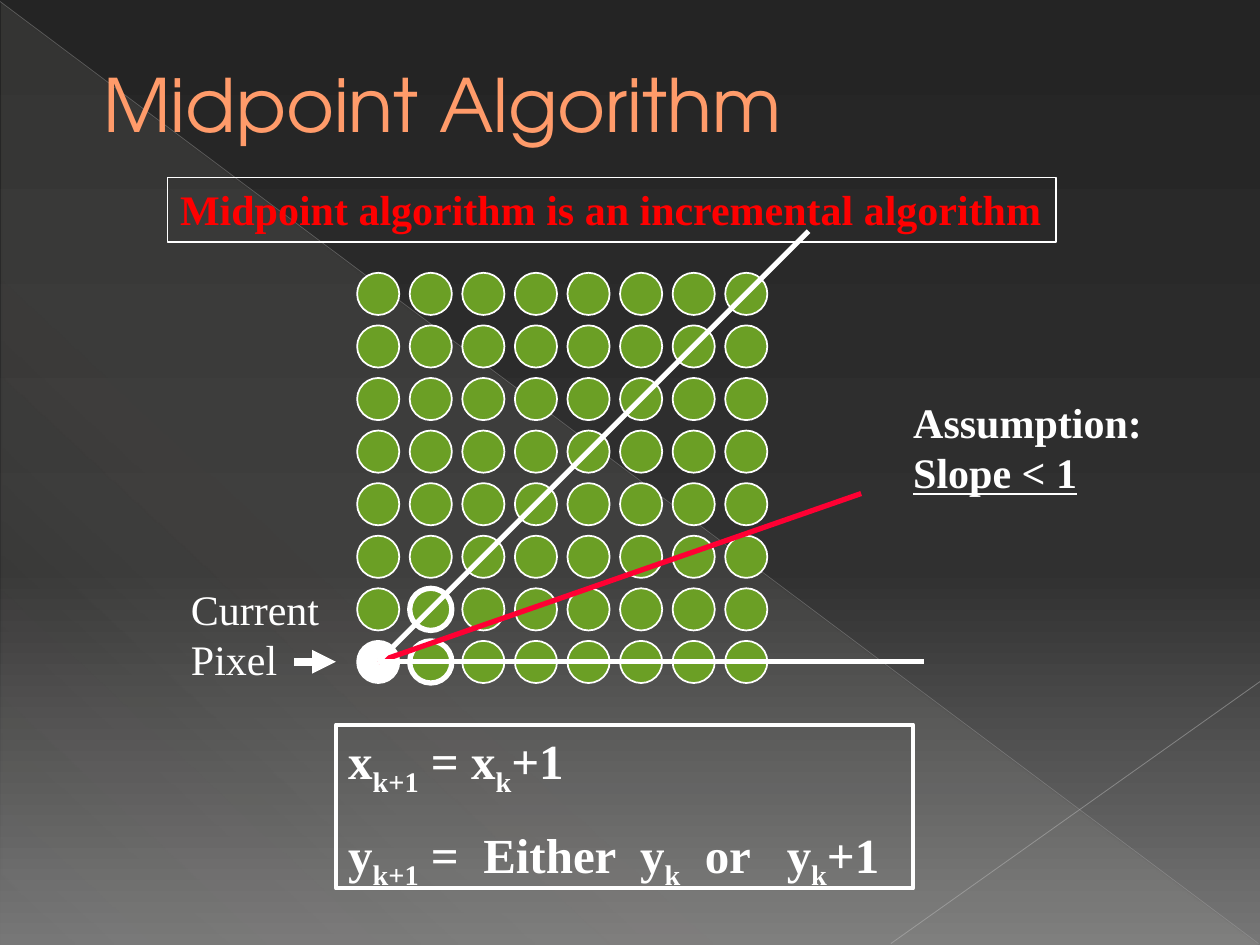
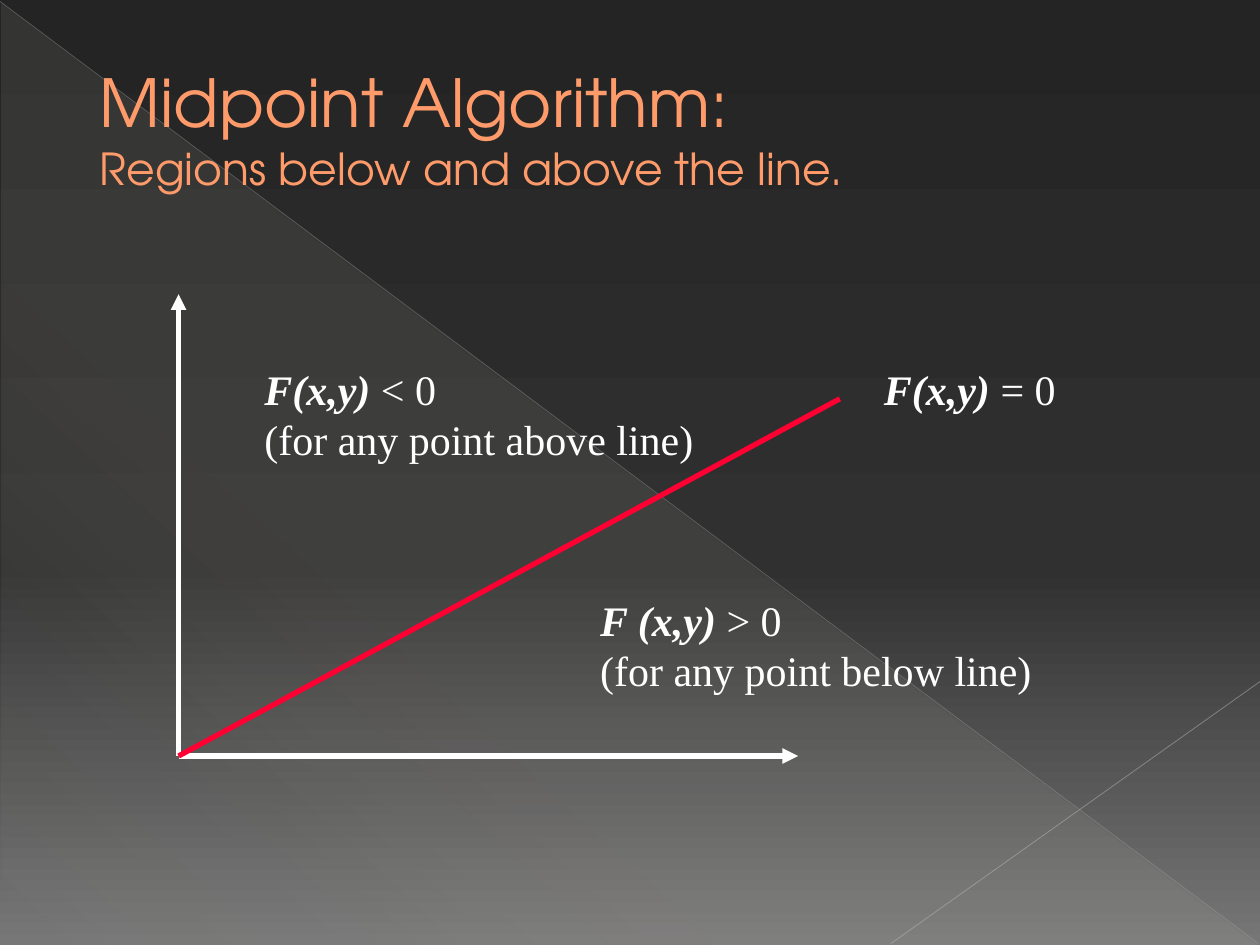
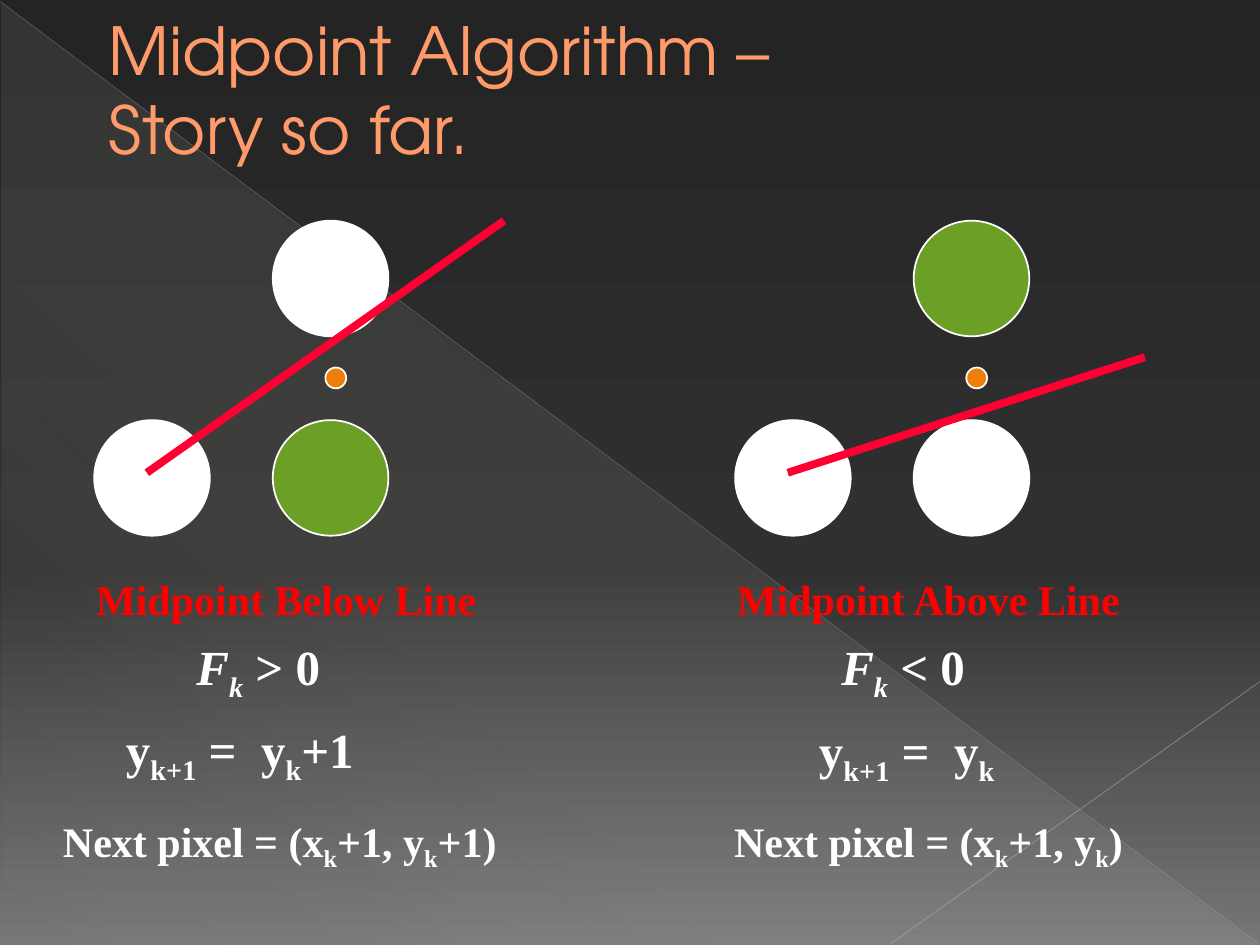
from dataclasses import dataclass

from lxml import etree
from pptx import Presentation
from pptx.dml.color import RGBColor
from pptx.enum.shapes import MSO_CONNECTOR, MSO_SHAPE
from pptx.enum.text import MSO_ANCHOR, MSO_AUTO_SIZE, PP_ALIGN
from pptx.oxml.ns import qn
from pptx.util import Cm, Pt

STRAIGHT = MSO_CONNECTOR.STRAIGHT
OVAL, RECTANGLE, TRIANGLE = MSO_SHAPE.OVAL, MSO_SHAPE.RECTANGLE, MSO_SHAPE.RIGHT_TRIANGLE
LEFT, TOP, MIDDLE = PP_ALIGN.LEFT, MSO_ANCHOR.TOP, MSO_ANCHOR.MIDDLE
FIT_TEXT, NO_FIT = MSO_AUTO_SIZE.SHAPE_TO_FIT_TEXT, MSO_AUTO_SIZE.NONE


@dataclass(frozen=True)
class Theme:
    title_font: str = "TeX Gyre Adventor"
    body_font: str = "Times New Roman"
    title: str = "FF9B6A"
    title_outline: str = "A65806"
    white: str = "FFFFFF"
    alert: str = "FF0000"
    line: str = "FF0033"
    pixel: str = "6B9F25"
    midpoint: str = "F07F09"
    title_large: float = 42
    title_medium: float = 37.8
    title_small: float = 25.2
    text: float = 24
    formula: float = 28
    formula_gap: float = 15


THEME = Theme()
RUN_STYLES = {
    "plain": {},
    "bold": {"bold": True},
    "underline": {"bold": True, "underline": True},
    "function": {"bold": True, "italic": True},
}


def formula(markup, first="bold"):
    parts = markup.split("|")
    styles = [first, first] + ["bold"] * len(parts)
    return [(text, style, -25 * (index % 2))
            for index, (text, style) in enumerate(zip(parts, styles))]


def region(name, relation, *notes):
    return [[(name, "function", 0), (relation, "plain", 0)]] + [[(note, "plain", 0)] for note in notes]


BACKGROUND = [(0, "242424", 100), (60, "303030", 100), (100, "767676", 100)]
VEIL = [(0, "E3DED1", 10), (70, "E3DED1", 8), (100, "E3DED1", 1)]
VEIL_BOX = (0.03, 0.05, 25.35, 19)
MASTER_LINES = [
    ((0, 0.03), (25.37, 19.02), "B6B6B6", 0.39, 35),
    ((25.4, 13.74), (17.96, 19.02), "BFBFBF", 0.47, 45),
]

TITLES = [
    ((0.48, 0.38, 17.78, 3.38), [("Midpoint Algorithm", THEME.title_large)]),
    ((0.41, 0.79, 17.63, 3.58), [("Midpoint Algorithm:", THEME.title_medium),
                                 ("Regions below and above the line.", THEME.title_small)]),
    ((0.58, 0, 21.82, 3.58), [("Midpoint Algorithm – ", THEME.title_medium),
                              ("Story so far.", THEME.title_medium)]),
]

GRID = {"left": 7.2, "top": 5.5, "pitch": 1.06, "size": 0.85, "count": 8}
CURRENT_PIXEL = (7, 0)
CANDIDATE_PIXELS = [(6, 1), (7, 1)]
CURRENT_CENTER = (7.62, 13.34)
GRID_LINES = [
    ((17.36, 9.95), THEME.line),
    ((16.3, 4.66), THEME.white),
    ((18.63, 13.34), THEME.white),
]
POINTER = ((5.93, 13.34), (6.77, 13.34))
FORMULA_BOX = (6.77, 14.61, 11.64, 3.3)
FORMULAS = [formula("x|k+1| = x|k|+1"), formula("y|k+1| =  Either  y|k|  or   y|k|+1")]
BANNER_BOX = (3.38, 3.58, 17.91, 1.3)
BANNER = [formula("Midpoint algorithm is an incremental algorithm")]
GRID_LABELS = [
    ((18.16, 7.87, 5.13, 2.29), [formula("Assumption:"), formula("Slope < 1", "underline")]),
    ((3.6, 11.64, 3.1, 2.29), [[("Current", "plain", 0)], [("Pixel", "plain", 0)]]),
]

ORIGIN = (3.6, 15.24)
AXIS_ENDS = [(16.09, 15.24), (3.6, 5.93)]
REGION_LINE_END = (16.93, 8.04)
REGIONS = [
    ((11.85, 11.85, 9.74, 2.29), region("F (x,y) ", "> 0", "(for any point below line)")),
    ((5.08, 7.2, 9.31, 2.29), region("F(x,y) ", "< 0", "(for any point above line)")),
    ((17.57, 7.2, 4.87, 1.27), region("F(x,y) ", "= 0")),
]

CASE_PIXEL_SIZE, MIDPOINT_SIZE = 2.33, 0.42
CASE_PIXELS = {"current": (0, 8.47), "lower": (3.6, 8.47), "upper": (3.6, 4.45)}
CASE_MIDPOINT = (4.66, 7.41)
CASE_LINE_START, CASE_LINE_REACH = (1.06, 9.53), 8.26
CASES = [
    {"left": 1.9, "unchosen": "lower", "line_end": 4.45, "texts": [
        ((1.69, 11.43, 8.18, 1.27), "Midpoint Below Line", THEME.text, THEME.alert, "bold"),
        ((1.02, 16.31, 9.32, 1.27), "Next pixel = (x|k|+1, y|k|+1)", THEME.text, THEME.white, "bold"),
        ((3.71, 12.7, 3.05, 1.45), "F|k| > 0", THEME.formula, THEME.white, "function"),
        ((2.29, 14.38, 5.33, 1.45), "y|k+1| =  y|k|+1", THEME.formula, THEME.white, "bold"),
    ]},
    {"left": 14.82, "unchosen": "upper", "line_end": 7.2, "texts": [
        ((14.61, 11.43, 8.28, 1.27), "Midpoint Above Line", THEME.text, THEME.alert, "bold"),
        ((14.55, 16.31, 8.43, 1.27), "Next pixel = (x|k|+1, y|k|)", THEME.text, THEME.white, "bold"),
        ((16.71, 12.7, 3.05, 1.45), "F|k| < 0", THEME.formula, THEME.white, "function"),
        ((16.26, 14.4, 4.27, 1.45), "y|k+1| =  y|k|", THEME.formula, THEME.white, "bold"),
    ]},
]


def lengths(values):
    return [Cm(value) for value in values]


def rgb(color):
    return RGBColor.from_string(color)


def set_values(target, values):
    for name, value in values.items():
        setattr(target, name, value)


def set_font(font, face, size, color, style):
    set_values(font, {"name": face, "size": Pt(size), **style})
    font.color.rgb = rgb(color)


def set_line(line, color, width):
    line.color.rgb = rgb(color)
    line.width = Pt(width)


def add_color(parent, color, opacity=100):
    element = etree.SubElement(parent, qn("a:srgbClr"), val=color)
    if opacity < 100:
        etree.SubElement(element, qn("a:alpha"), val=str(opacity * 1000))


def set_gradient(fill, owner, stops, angle):
    fill.gradient()
    fill.gradient_angle = 360 - angle
    stop_list = owner.find(".//" + qn("a:gsLst"))
    for stop in list(stop_list):
        stop_list.remove(stop)
    for position, color, opacity in stops:
        stop = etree.SubElement(stop_list, qn("a:gs"), pos=str(position * 1000))
        add_color(stop, color, opacity)


def add_line(slide, start, end, color, width, arrow=False, opacity=100):
    connector = slide.shapes.add_connector(STRAIGHT, *lengths(start + end))
    set_line(connector.line, color, width)
    line_element = connector.line._get_or_add_ln()
    if opacity < 100:
        solid_fill = line_element.find(qn("a:solidFill"))
        solid_fill.clear()
        add_color(solid_fill, color, opacity)
    if arrow:
        etree.SubElement(line_element, qn("a:tailEnd"), type="triangle")
    etree.SubElement(connector.element.spPr, qn("a:effectLst"))
    return connector


def add_pixel(slide, left, top, size, color, width=1):
    shape = slide.shapes.add_shape(OVAL, *lengths((left, top, size, size)))
    shape.shadow.inherit = False
    shape.fill.solid()
    shape.fill.fore_color.rgb = rgb(color)
    set_line(shape.line, THEME.white, width)


def add_text(slide, box, paragraphs, size=THEME.text, color=THEME.white,
             wrap=False, border=0, gap=0):
    if border:
        shape = slide.shapes.add_shape(RECTANGLE, *lengths(box))
        shape.shadow.inherit = False
        shape.fill.background()
        set_line(shape.line, THEME.white, border)
    else:
        shape = slide.shapes.add_textbox(*lengths(box))
    frame = shape.text_frame
    set_values(frame, {"word_wrap": wrap, "auto_size": FIT_TEXT, "vertical_anchor": TOP})
    for index, runs in enumerate(paragraphs):
        paragraph = frame.add_paragraph() if index else frame.paragraphs[0]
        paragraph.alignment = LEFT
        if index and gap:
            paragraph.space_before = Pt(gap)
        for text, style, baseline in runs:
            run = paragraph.add_run()
            run.text = text
            set_font(run.font, THEME.body_font, size, color, RUN_STYLES[style])
            if baseline:
                run._r.get_or_add_rPr().set("baseline", str(baseline * 1000))


def add_title(slide, box, lines):
    title = slide.shapes.title
    set_values(title, dict(zip(("left", "top", "width", "height"), lengths(box))))
    set_values(title.text_frame, {"word_wrap": True, "auto_size": NO_FIT, "vertical_anchor": MIDDLE})
    paragraph = title.text_frame.paragraphs[0]
    paragraph.alignment = LEFT
    set_values_in_element = paragraph._p.get_or_add_pPr().set
    set_values_in_element("marL", str(Cm(1.35)))
    set_values_in_element("indent", "0")
    for index, (text, size) in enumerate(lines):
        if index:
            paragraph.add_line_break()
        run = paragraph.add_run()
        run.text = text
        set_font(run.font, THEME.title_font, size, THEME.title, {})
        outline = etree.Element(qn("a:ln"), w=str(Pt(0.5)))
        add_color(etree.SubElement(outline, qn("a:solidFill")), THEME.title_outline)
        run._r.get_or_add_rPr().insert(0, outline)


def decorate_master(master, slide):
    set_gradient(master.background.fill, master.element, BACKGROUND, 90)
    veil = slide.shapes.add_shape(TRIANGLE, *lengths(VEIL_BOX))
    veil.shadow.inherit = False
    veil.line.fill.background()
    set_gradient(veil.fill, veil.element, VEIL, 133)
    decorations = [veil]
    for start, end, color, width, opacity in MASTER_LINES:
        decorations.append(add_line(slide, start, end, color, width, opacity=opacity))
    for index, shape in enumerate(decorations):
        shape.element.find(".//" + qn("p:cNvPr")).set("id", str(100 + index))
        master.shapes.element.insert(2 + index, shape.element)


def draw_pixel_grid(slide):
    add_text(slide, FORMULA_BOX, FORMULAS, THEME.formula, border=2.25, gap=THEME.formula_gap)
    add_text(slide, BANNER_BOX, BANNER, color=THEME.alert, border=1)
    for row in range(GRID["count"]):
        for column in range(GRID["count"]):
            cell = (row, column)
            add_pixel(slide, GRID["left"] + column * GRID["pitch"],
                      GRID["top"] + row * GRID["pitch"], GRID["size"],
                      THEME.white if cell == CURRENT_PIXEL else THEME.pixel,
                      3 if cell in CANDIDATE_PIXELS else 1)
    for end, color in GRID_LINES:
        add_line(slide, CURRENT_CENTER, end, color, 3)
    for box, paragraphs in GRID_LABELS:
        add_text(slide, box, paragraphs)
    add_line(slide, *POINTER, THEME.white, 4.5, arrow=True)


def draw_regions(slide):
    for end in AXIS_ENDS:
        add_line(slide, ORIGIN, end, THEME.white, 3, arrow=True)
    add_line(slide, ORIGIN, REGION_LINE_END, THEME.line, 3)
    for box, paragraphs in REGIONS:
        add_text(slide, box, paragraphs, wrap=True)


def draw_cases(slide):
    for case in CASES:
        left = case["left"]
        for name, (offset, top) in CASE_PIXELS.items():
            color = THEME.pixel if name == case["unchosen"] else THEME.white
            add_pixel(slide, left + offset, top, CASE_PIXEL_SIZE, color)
        start_offset, start_top = CASE_LINE_START
        add_line(slide, (left + start_offset, start_top),
                 (left + CASE_LINE_REACH, case["line_end"]), THEME.line, 4.5)
        offset, top = CASE_MIDPOINT
        add_pixel(slide, left + offset, top, MIDPOINT_SIZE, THEME.midpoint)
        for box, markup, size, color, first in case["texts"]:
            add_text(slide, box, [formula(markup, first)], size, color)


def main():
    presentation = Presentation()
    presentation.slide_width, presentation.slide_height = Cm(25.4), Cm(19.05)
    title_only = presentation.slide_layouts[5]
    drawings = [draw_pixel_grid, draw_regions, draw_cases]
    for index, ((box, lines), draw) in enumerate(zip(TITLES, drawings)):
        slide = presentation.slides.add_slide(title_only)
        if index == 0:
            decorate_master(presentation.slide_master, slide)
        add_title(slide, box, lines)
        draw(slide)
    presentation.save("out.pptx")


if __name__ == "__main__":
    main()
